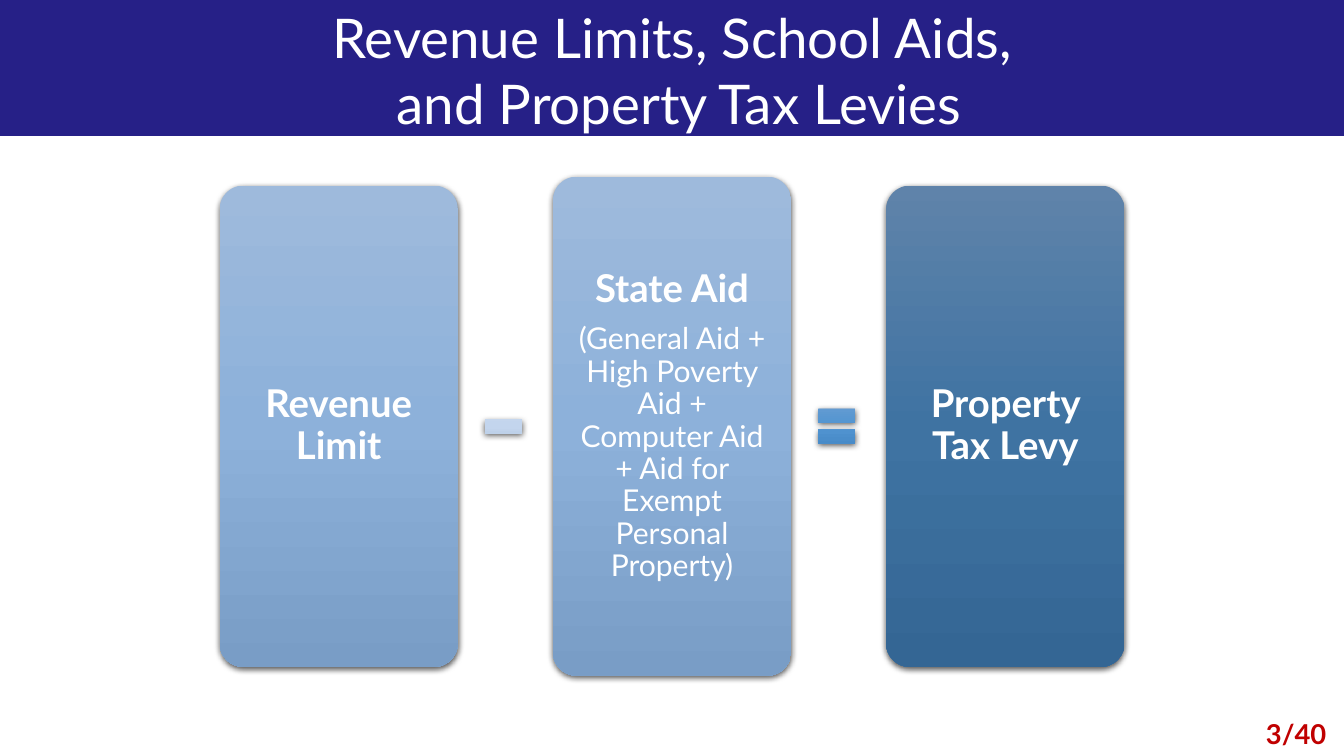
from lxml import etree
from pptx import Presentation
from pptx.dml.color import RGBColor
from pptx.enum.shapes import MSO_SHAPE as Geo
from pptx.enum.text import MSO_ANCHOR as Anchor, PP_ALIGN as Align
from pptx.oxml import parse_xml
from pptx.oxml.ns import nsdecls, qn
from pptx.util import Inches, Pt


def style(par, size, color="FFFFFF", bold=False):
    par.alignment = Align.CENTER
    for run in par.runs:
        font = run.font
        font.name, font.size, font.bold = "Lato", Pt(size), bold
        font.color.rgb = RGBColor.from_string(color)


def shade(shape, colors):
    """Fill from top to bottom with evenly spaced colours and cast a soft shadow."""
    shape.line.fill.background()
    shape.fill.gradient()
    shape.fill.gradient_angle = 270
    props = shape.element.spPr
    stops = props.find(qn("a:gradFill")).find(qn("a:gsLst"))
    for stop in list(stops):
        stops.remove(stop)
    for i, color in enumerate(colors):
        stop = etree.SubElement(stops, qn("a:gs"), pos=str(i * 50000))
        etree.SubElement(stop, qn("a:srgbClr"), val=color)
    props.append(parse_xml(
        f'<a:effectLst {nsdecls("a")}>'
        '<a:outerShdw blurRad="57150" dist="19050" dir="5400000" algn="ctr" rotWithShape="0">'
        '<a:srgbClr val="000000"><a:alpha val="63000"/></a:srgbClr>'
        '</a:outerShdw></a:effectLst>'))


deck = Presentation()
deck.slide_width, deck.slide_height = Inches(13.65), Inches(7.68)
shapes = deck.slides.add_slide(deck.slide_layouts[6]).shapes

# Title band
band = shapes.add_shape(Geo.RECTANGLE, 0, 0, Inches(13.65), Inches(1.38))
band.shadow.inherit = False
band.fill.solid()
band.fill.fore_color.rgb = RGBColor.from_string("262087")
band.line.fill.background()

title = shapes.add_textbox(0, 0, Inches(13.65), Inches(1.41)).text_frame
title.word_wrap = True
title.vertical_anchor = Anchor.MIDDLE
head = title.paragraphs[0]
head.text = "Revenue Limits, School Aids,\n and Property Tax Levies"
head.space_after = Pt(6)
style(head, 40)

# Equation cards, evenly spaced and centred on one line
MID, STEP, WIDE = 4.33, 3.385, 2.42
LIGHT = ["9EBADC", "8DB1DA", "799DC6"]
DARK = ["5F83AA", "3F73A2", "346694"]
AIDS = "(General Aid + High Poverty Aid + Computer Aid + Aid for Exempt Personal Property)"
cards = [
    (4.89, LIGHT, ["Revenue Limit"]),
    (5.07, LIGHT, ["State Aid", AIDS]),
    (4.89, DARK, ["Property Tax Levy"]),
]
for i, (tall, colors, lines) in enumerate(cards):
    card = shapes.add_shape(Geo.ROUNDED_RECTANGLE, Inches(2.23 + i * STEP),
                            Inches(MID - tall / 2), Inches(WIDE), Inches(tall))
    card.adjustments[0] = 0.1
    shade(card, colors)
    frame = card.text_frame
    frame.word_wrap = True
    frame.vertical_anchor = Anchor.MIDDLE
    frame.margin_left = frame.margin_right = Inches(0.12)
    frame.margin_top = frame.margin_bottom = Inches(0.12)
    frame.text = "\n".join(lines)
    for j, par in enumerate(frame.paragraphs):
        size = 22 if j else 28
        par.line_spacing = 0.9
        par.space_after = Pt(size * 0.35)
        style(par, size, bold=j == 0)

# Operators between the cards
signs = [
    (Geo.MATH_MINUS, ["CEDCEF", "C3D5ED", "AABDD6"]),
    (Geo.MATH_EQUAL, ["6EA0D2", "5194D1", "4184C1"]),
]
for i, (kind, colors) in enumerate(signs):
    sign = shapes.add_shape(kind, Inches(4.86 + i * STEP), Inches(MID - 0.3),
                            Inches(0.51), Inches(0.6))
    shade(sign, colors)

# Page number
page = shapes.add_textbox(Inches(12.68), Inches(7.24), Inches(0.97), Inches(0.44)).text_frame
page.word_wrap = True
page.text = "3/40"
style(page.paragraphs[0], 20, "C00000", True)

deck.save("out.pptx")
